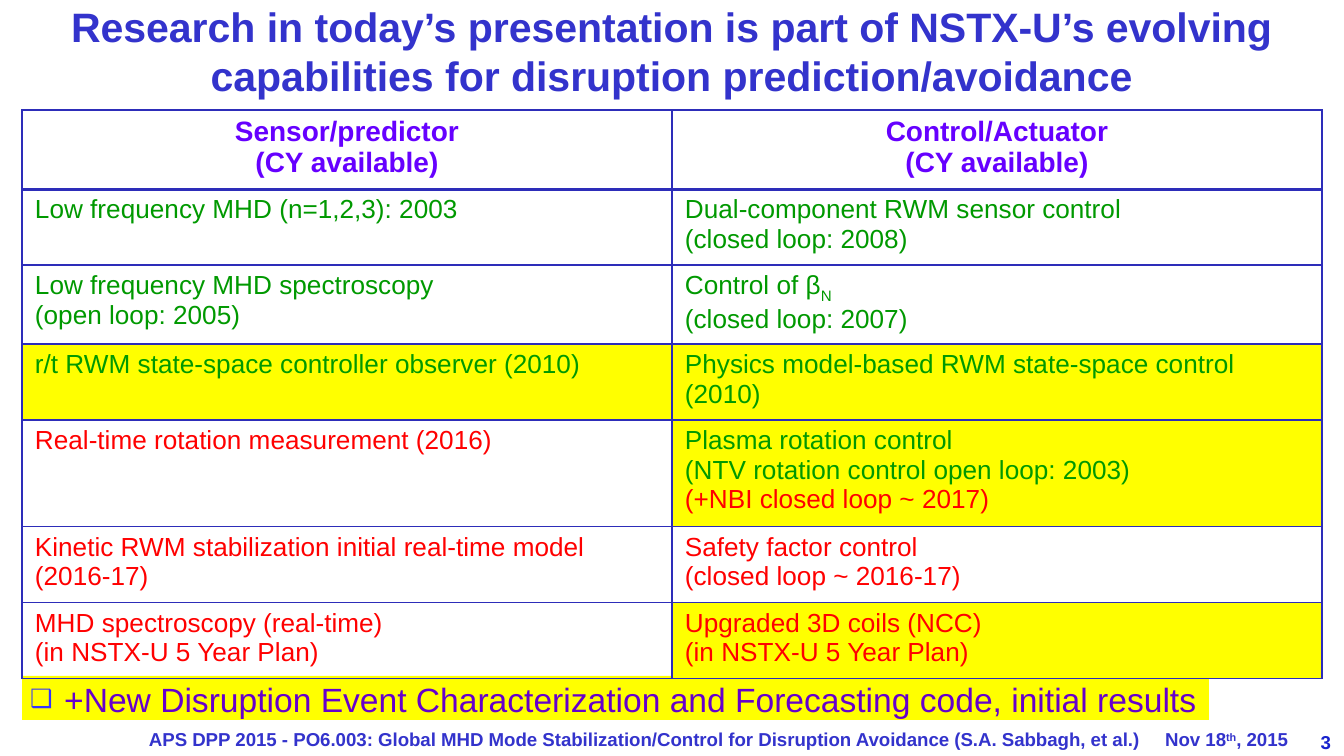
from lxml.etree import SubElement as Sub
from pptx import Presentation
from pptx.dml.color import RGBColor as Color
from pptx.enum.shapes import MSO_SHAPE as Shape
from pptx.enum.text import MSO_ANCHOR as Anchor, PP_ALIGN as Align
from pptx.oxml.ns import qn
from pptx.util import Emu, Pt

SCALE = 914400 / 134.4
BLUE = Color(0x33, 0x33, 0xCC)
PAGE = Color(0x18, 0x22, 0xCD)
VIOLET = Color(0x66, 0x00, 0xFF)
PURPLE = Color(0x66, 0x00, 0xCC)
MARK = Color(0x33, 0x33, 0xFF)
EDGE = Color(0x2D, 0x2D, 0xB9)
GREEN = Color(0x00, 0x99, 0x00)
RED = Color(0xFF, 0x00, 0x00)
YELLOW = Color(0xFF, 0xFF, 0x00)

HEADS = ["Sensor/predictor", "Control/Actuator"]
ROWS = [
    [("Low frequency MHD (n=1,2,3): 2003", GREEN, False),
     ("Dual-component RWM sensor control\n(closed loop: 2008)", GREEN, False)],
    [("Low frequency MHD spectroscopy\n(open loop: 2005)", GREEN, False),
     ("Control of β|N|\n(closed loop: 2007)", GREEN, False)],
    [("r/t RWM state-space controller observer (2010)", GREEN, True),
     ("Physics model-based RWM state-space control (2010)", GREEN, True)],
    [("Real-time rotation measurement (2016)", RED, False),
     ("Plasma rotation control\n(NTV rotation control open loop: 2003)\n"
      "(+NBI closed loop ~ 2017)", GREEN, True)],
    [("Kinetic RWM stabilization initial real-time model (2016-17)", RED, False),
     ("Safety factor control\n(closed loop ~ 2016-17)", RED, False)],
    [("MHD spectroscopy (real-time)\n(in NSTX-U 5 Year Plan)", RED, False),
     ("Upgraded 3D coils (NCC)\n(in NSTX-U 5 Year Plan)", RED, True)],
]
HIGHS = [77, 76, 76, 76, 100, 76, 76]


def px(num):
    """Turn pixels into EMU."""
    return Emu(round(num * SCALE))


def style(font, size, color, bold=False):
    """Set the look of a font."""
    font.name = "Arial"
    font.size = Pt(size)
    font.bold = bold
    font.color.rgb = color


def write(frame, text, size, color, bold=False, align=Align.LEFT, shift=-25):
    """Fill a frame line by line, shifting the parts between bars."""
    lines = text.split("\n")
    frame.text = "\n".join([""] * len(lines))
    for para, line in zip(frame.paragraphs, lines):
        para.alignment = align
        for pos, part in enumerate(line.split("|")):
            if part:
                run = para.add_run()
                run.text = part
                style(run.font, size, color, bold)
                if pos % 2:
                    run.font._element.set("baseline", str(shift * 1000))


def add_text(slide, box, text, size, color, bold=True, align=Align.CENTER,
             inset=True, anchor=Anchor.MIDDLE, shift=30):
    """Add a wrapped text box and return its frame."""
    frame = slide.shapes.add_textbox(*map(px, box)).text_frame
    frame.word_wrap = True
    frame.vertical_anchor = anchor
    if not inset:
        frame.margin_left = frame.margin_right = 0
        frame.margin_top = frame.margin_bottom = 0
    write(frame, text, size, color, bold, align, shift)
    return frame


def add_bar(slide, box):
    """Add the yellow bar."""
    bar = slide.shapes.add_shape(Shape.RECTANGLE, *map(px, box))
    bar.shadow.inherit = False
    bar.fill.solid()
    bar.fill.fore_color.rgb = YELLOW
    bar.line.fill.background()


def add_edges(cell, base):
    """Draw the four borders of a cell, given the width of each."""
    props = cell._tc.get_or_add_tcPr()
    for pos, (tag, width) in enumerate(base.items()):
        line = Sub(props, qn(f"a:{tag}"), w=str(Pt(width)))
        fill = Sub(line, qn("a:solidFill"))
        Sub(fill, qn("a:srgbClr"), val=str(EDGE))
        props.remove(line)
        props.insert(pos, line)


def set_cell(cell, text, size, color, lit=False, head=False, top=1):
    """Fill one table cell."""
    cell.margin_left = cell.margin_right = px(13)
    cell.margin_top = cell.margin_bottom = px(6)
    if lit:
        cell.fill.solid()
        cell.fill.fore_color.rgb = YELLOW
    else:
        cell.fill.background()
    align = Align.CENTER if head else Align.LEFT
    write(cell.text_frame, text, size, color, head, align)
    low = 2 if head else 1
    add_edges(cell, {"lnL": 1, "lnR": 1, "lnT": top, "lnB": low})


def add_grid(slide):
    """Add the table of sensors and actuators."""
    box = map(px, (22, 110, 1300, sum(HIGHS)))
    grid = slide.shapes.add_table(len(HIGHS), len(HEADS), *box).table
    grid.first_row = grid.horz_banding = False
    for row, high in zip(grid.rows, HIGHS):
        row.height = px(high)
    for col, head in enumerate(HEADS):
        grid.columns[col].width = px(650)
        set_cell(grid.cell(0, col), f"{head}\n(CY available)", 15, VIOLET,
                 head=True)
    for num, row in enumerate(ROWS, 1):
        for col, (text, color, lit) in enumerate(row):
            set_cell(grid.cell(num, col), text, 14, color, lit,
                     top=2 if num == 1 else 1)
    last = grid.cell(4, 1).text_frame.paragraphs[-1]
    last.runs[0].font.color.rgb = RED


def add_point(slide):
    """Add the closing bullet."""
    frame = add_text(
        slide, (0, 672, 1344, 54),
        "+New Disruption Event Characterization and Forecasting code, "
        "initial results", 18, PURPLE, bold=False, align=Align.LEFT,
        anchor=Anchor.TOP)
    props = frame.paragraphs[0]._p.get_or_add_pPr()
    props.set("marL", str(px(51)))
    props.set("indent", str(px(-34)))
    tint = Sub(props, qn("a:buClr"))
    Sub(tint, qn("a:srgbClr"), val=str(MARK))
    Sub(props, qn("a:buSzPct"), val="75000")
    Sub(props, qn("a:buFont"), typeface="Arial")
    Sub(props, qn("a:buChar"), char="❑")


def main():
    """Build the slide."""
    deck = Presentation()
    deck.slide_width, deck.slide_height = px(1344), px(756)
    slide = deck.slides.add_slide(deck.slide_layouts[6])
    add_text(slide, (1031, 722, 313, 40), "3", 10, PAGE, align=Align.RIGHT)
    add_text(slide, (118, 724, 1052, 31),
             "APS DPP 2015 - PO6.003: Global MHD Mode Stabilization/Control "
             "for Disruption Avoidance (S.A. Sabbagh, et al.)",
             10, BLUE, inset=False)
    add_text(slide, (997, 724, 291, 31), "Nov 18|th|, 2015", 10, BLUE,
             align=Align.RIGHT, inset=False)
    add_bar(slide, (22, 676, 1187, 44))
    add_grid(slide)
    add_text(slide, (0, -4, 1344, 109),
             "Research in today’s presentation is part of NSTX-U’s evolving "
             "capabilities for disruption prediction/avoidance", 22, BLUE)
    add_point(slide)
    deck.save("out.pptx")


if __name__ == "__main__":
    main()
